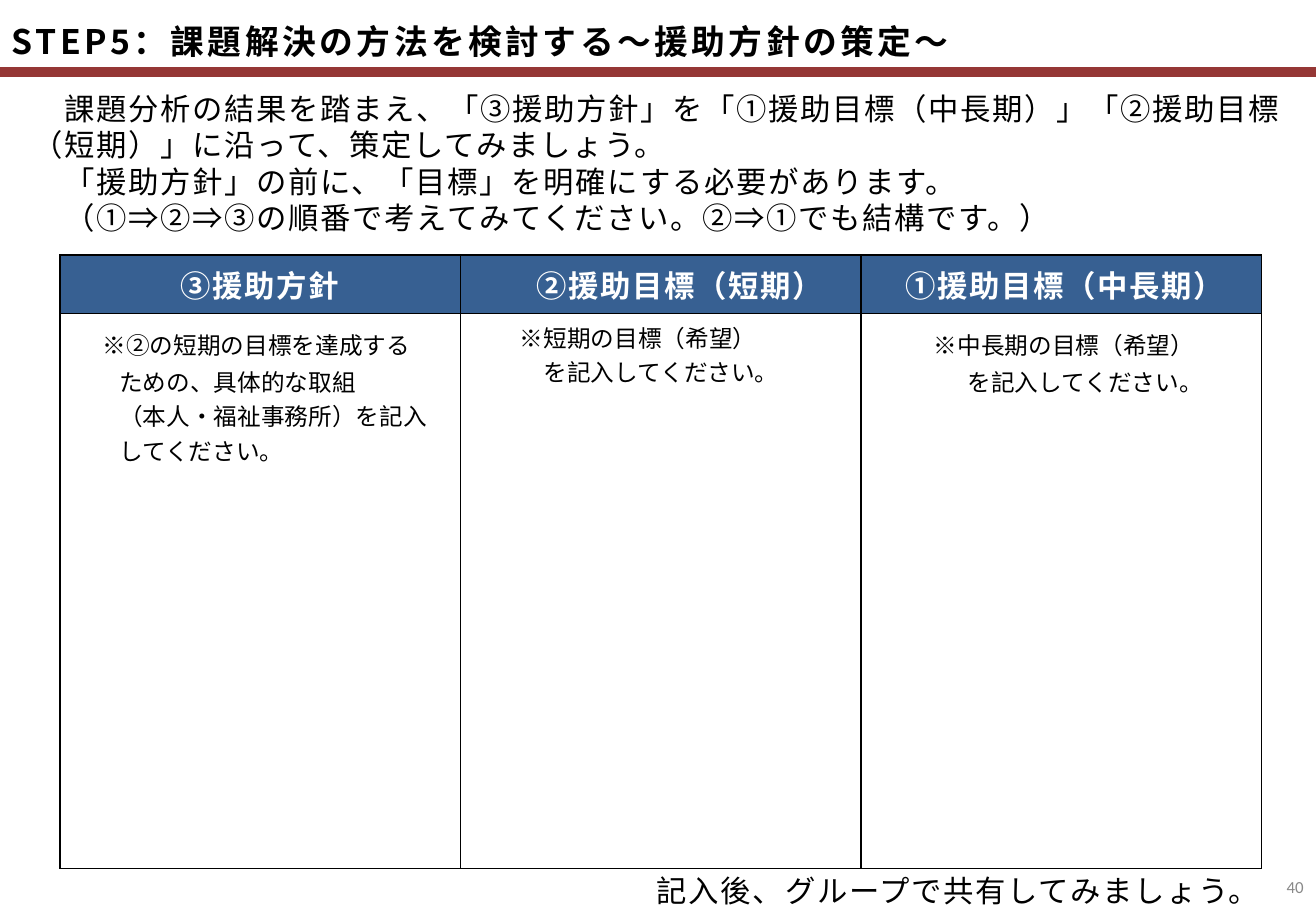
from dataclasses import dataclass

import lxml.etree
import pptx
import pptx.dml.color
import pptx.enum.shapes
import pptx.enum.text
import pptx.oxml.ns
import pptx.util

Pt = pptx.util.Pt
RGBColor = pptx.dml.color.RGBColor
Align = pptx.enum.text.PP_ALIGN
Anchor = pptx.enum.text.MSO_ANCHOR
qn = pptx.oxml.ns.qn

BLACK = RGBColor(0x00, 0x00, 0x00)
WHITE = RGBColor(0xFF, 0xFF, 0xFF)
GRAY = RGBColor(0x89, 0x89, 0x89)
RED = RGBColor(0x95, 0x37, 0x35)
BLUE = RGBColor(0x37, 0x60, 0x92)
JAPANESE = "Noto Sans CJK JP"


@dataclass
class Style:
    size: float
    color: RGBColor = BLACK
    bold: bool = False
    spacing: float = 0
    face: str = JAPANESE


@dataclass
class Line:
    text: str
    margin: float = 0
    first: float = 0
    align: Align = Align.LEFT
    after: float = 0


@dataclass
class Block:
    left: float
    top: float
    width: float
    height: float
    lines: list[Line]
    style: Style
    anchor: Anchor = Anchor.MIDDLE
    inset_top: float = 3.6
    inset_bottom: float = 3.6


@dataclass
class Column:
    header: Line
    notes: list[Line]
    inset_top: float


def write_lines(frame, lines: list[Line], style: Style) -> None:
    for index, line in enumerate(lines):
        para = frame.paragraphs[0] if index == 0 else frame.add_paragraph()
        para.text = line.text
        para.alignment = line.align
        para.space_after = Pt(line.after)
        font = para.font
        font.size, font.bold, font.name = Pt(style.size), style.bold, style.face
        font.color.rgb = style.color
        properties = para._p.get_or_add_pPr()
        properties.set("marL", str(Pt(line.margin)))
        properties.set("indent", str(Pt(line.first)))
        defaults = properties.find(qn("a:defRPr"))
        defaults.set("spc", str(round(style.spacing * 100)))
        lxml.etree.SubElement(defaults, qn("a:ea")).set("typeface", style.face)


def add_block(page, block: Block) -> None:
    box = page.shapes.add_textbox(Pt(block.left), Pt(block.top), Pt(block.width), Pt(block.height))
    frame = box.text_frame
    frame.word_wrap = True
    frame.vertical_anchor = block.anchor
    frame.margin_top, frame.margin_bottom = Pt(block.inset_top), Pt(block.inset_bottom)
    write_lines(frame, block.lines, block.style)


def add_rule(page, top: float, width: float, weight: float) -> None:
    rule = page.shapes.add_connector(
        pptx.enum.shapes.MSO_CONNECTOR.STRAIGHT, Pt(0), Pt(top), Pt(width), Pt(top))
    rule.line.color.rgb = RED
    rule.line.width = Pt(weight)
    lxml.etree.SubElement(rule._element.spPr, qn("a:effectLst"))


def add_borders(cell) -> None:
    properties = cell._tc.get_or_add_tcPr()
    for side in ("a:lnL", "a:lnR", "a:lnT", "a:lnB"):
        border = lxml.etree.SubElement(properties, qn(side), w=str(Pt(1)))
        fill = lxml.etree.SubElement(border, qn("a:solidFill"))
        lxml.etree.SubElement(fill, qn("a:srgbClr"), val=str(BLACK))


def add_plan_table(page, columns: list[Column]) -> None:
    column_width, row_heights = 237.4, (34.6, 329)
    table = page.shapes.add_table(
        2, len(columns), Pt(35.5), Pt(151.2),
        Pt(column_width * len(columns)), Pt(sum(row_heights))).table
    table.first_row = table.horz_banding = False
    for row, height in zip(table.rows, row_heights):
        row.height = Pt(height)
    for index, column in enumerate(columns):
        table.columns[index].width = Pt(column_width)
        header, body = table.cell(0, index), table.cell(1, index)
        for cell in (header, body):
            add_borders(cell)
        header.fill.solid()
        header.fill.fore_color.rgb = BLUE
        header.vertical_anchor = Anchor.MIDDLE
        write_lines(header.text_frame, [column.header], HEADER)
        body.fill.background()
        body.margin_top = Pt(column.inset_top)
        write_lines(body.text_frame, column.notes, NOTE)


TITLE = Style(20, bold=True, spacing=2)
BODY = Style(18, spacing=1)
HEADER = Style(18, WHITE, bold=True, spacing=1)
NOTE = Style(14)
NUMBER = Style(10, GRAY, face="Calibri")

BLOCKS = [
    # Page number
    Block(750.2, 511.2, 29.5, 28.8, [Line("40", align=Align.RIGHT)], NUMBER),
    # Title
    Block(0, 0, 758.9, 42.5, [Line("STEP5：課題解決の方法を検討する～援助方針の策定～")],
          TITLE, inset_top=5.8, inset_bottom=0),
    # Instructions
    Block(12.2, 49.7, 758.9, 94.3, [Line(text, first=19) for text in (
        "課題分析の結果を踏まえ、「③援助方針」を「①援助目標（中長期）」「②援助目標（短期）」に沿って、策定してみましょう。",
        "「援助方針」の前に、「目標」を明確にする必要があります。",
        "（①⇒②⇒③の順番で考えてみてください。②⇒①でも結構です。）",
    )], BODY, Anchor.TOP),
    # Closing remark
    Block(382.3, 513.4, 382.3, 28.8, [Line("記入後、グループで共有してみましょう。")], BODY),
]

COLUMNS = [
    Column(Line("③援助方針", align=Align.CENTER), [
        Line("※②の短期の目標を達成する", margin=18, after=1.2),
        Line("ための、具体的な取組", margin=28),
        Line("（本人・福祉事務所）を記入\nしてください。", margin=28),
    ], 8.2),
    Column(Line("②援助目標（短期）", margin=38), [
        Line("※短期の目標（希望）", margin=28),
        Line("を記入してください。", margin=42),
    ], 3.6),
    Column(Line("①援助目標（中長期）", margin=19), [
        Line("※中長期の目標（希望）", margin=36, after=1.2),
        Line("を記入してください。", margin=56),
    ], 8.2),
]


def main() -> None:
    deck = pptx.Presentation()
    deck.slide_width, deck.slide_height = Pt(780), Pt(540)
    page = deck.slides.add_slide(deck.slide_layouts[6])
    add_rule(page, 42.5, 780, 6)
    for block in BLOCKS:
        add_block(page, block)
    add_plan_table(page, COLUMNS)
    deck.save("out.pptx")


if __name__ == "__main__":
    main()
